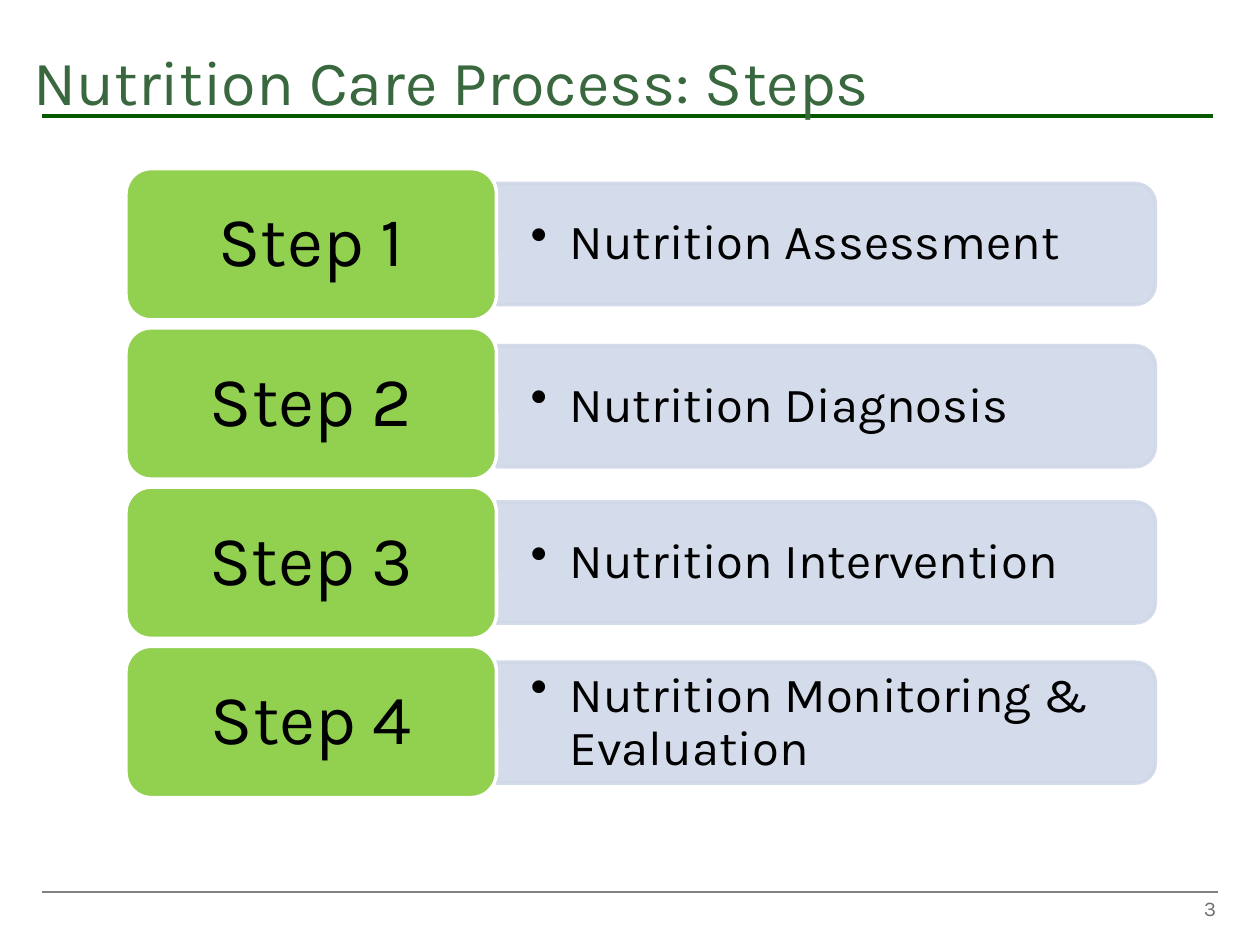
from lxml import etree
from pptx import Presentation
from pptx.dml.color import RGBColor
from pptx.enum.shapes import MSO_CONNECTOR, MSO_SHAPE
from pptx.enum.text import MSO_ANCHOR, PP_ALIGN
from pptx.oxml.ns import qn
from pptx.util import Cm, Pt

STRAIGHT = MSO_CONNECTOR.STRAIGHT
ROUND_RECT = MSO_SHAPE.ROUNDED_RECTANGLE
ROUND_TOP = MSO_SHAPE.ROUND_2_SAME_RECTANGLE
MIDDLE = MSO_ANCHOR.MIDDLE
LEFT, CENTER, RIGHT = PP_ALIGN.LEFT, PP_ALIGN.CENTER, PP_ALIGN.RIGHT

# Label, and vertical centre of its bar in cm
STEPS = [
    ("Nutrition Assessment", 4.92),
    ("Nutrition Diagnosis", 8.19),
    ("Nutrition Intervention", 11.34),
    ("Nutrition Monitoring & Evaluation", 14.57),
]
STEP_LEFT, STEP_TOP, STEP_W, STEP_H, STEP_PITCH = 2.54, 3.4, 7.47, 3.05, 3.21
BAR_LEFT, BAR_W, BAR_H = STEP_LEFT + STEP_W, 13.28, 2.44
LABEL_W, LABEL_H = 13.16, 2.21


def rgb(color):
    return RGBColor.from_string(color)


class StepSlide:
    font = "Karla"
    green, pale, white, black = "92D050", "D0D8E8", "FFFFFF", "000000"

    def __init__(self, s):
        self.s = s

    def rule(self, x1, x2, y, color, width):
        """Draw a horizontal line across the slide."""
        line = self.s.shapes.add_connector(STRAIGHT, Cm(x1), Cm(y), Cm(x2), Cm(y))
        line.line.color.rgb = rgb(color)
        line.line.width = Pt(width)
        etree.SubElement(line._element.spPr, qn("a:effectLst"))

    def fill_text(self, sp, text, size, color, align=LEFT, inset=(0.25, 0.13),
                  spacing=None, bullet=False):
        tf = sp.text_frame
        tf.word_wrap = True
        tf.vertical_anchor = MIDDLE
        tf.margin_left = tf.margin_right = Cm(inset[0])
        tf.margin_top = tf.margin_bottom = Cm(inset[1])
        p = tf.paragraphs[0]
        p.alignment = align
        if spacing:
            p.line_spacing = spacing
        if bullet:
            pPr = p._p.get_or_add_pPr()
            pPr.set("marL", str(Cm(0.79)))
            pPr.set("indent", str(Cm(-0.79)))
            etree.SubElement(pPr, qn("a:buChar"), char="•")
        r = p.add_run()
        r.text = text
        r.font.name = self.font
        r.font.size = Pt(size)
        r.font.color.rgb = rgb(color)

    def text(self, x, y, w, h, *args, **kwargs):
        sp = self.s.shapes.add_textbox(Cm(x), Cm(y), Cm(w), Cm(h))
        self.fill_text(sp, *args, **kwargs)

    def shape(self, kind, x, y, w, h, fill, line):
        sp = self.s.shapes.add_shape(kind, Cm(x), Cm(y), Cm(w), Cm(h))
        sp.shadow.inherit = False
        sp.fill.solid()
        sp.fill.fore_color.rgb = rgb(fill)
        sp.line.color.rgb = rgb(line)
        sp.line.width = Pt(2)
        return sp

    def bar(self, middle, label):
        """Draw a bar, rotated so its rounded end is on the right, and its label."""
        x = BAR_LEFT + (BAR_W - BAR_H) / 2
        sp = self.shape(ROUND_TOP, x, middle - BAR_W / 2, BAR_H, BAR_W,
                        self.pale, self.pale)
        sp.rotation = 90
        for clr in sp._element.spPr.iter(qn("a:srgbClr")):
            etree.SubElement(clr, qn("a:alpha"), val="90000")
        self.text(BAR_LEFT, middle - LABEL_H / 2, LABEL_W, LABEL_H, label, 28,
                  self.black, inset=(0.69, 0.36), spacing=0.9, bullet=True)

    def step(self, index):
        sp = self.shape(ROUND_RECT, STEP_LEFT, STEP_TOP + index * STEP_PITCH,
                        STEP_W, STEP_H, self.green, self.white)
        self.fill_text(sp, f"Step {index + 1}", 40, self.black, CENTER,
                       inset=(0.42, 0.21), spacing=0.9)


def main():
    prs = Presentation()
    prs.slide_width, prs.slide_height = Cm(25.4), Cm(19.05)
    page = StepSlide(prs.slides.add_slide(prs.slide_layouts[6]))

    page.rule(0.84, 24.56, 17.98, "808080", 1)
    page.rule(0.84, 24.46, 2.34, "065901", 2.25)
    page.text(0.42, 0.84, 22.86, 1.57, "Nutrition Care Process: Steps", 36, "39683E")
    page.text(18.85, 17.98, 5.92, 0.64, "3", 12, "717171", RIGHT)

    for i, (label, middle) in enumerate(STEPS):
        page.bar(middle, label)
        page.step(i)

    prs.save("out.pptx")


if __name__ == "__main__":
    main()
